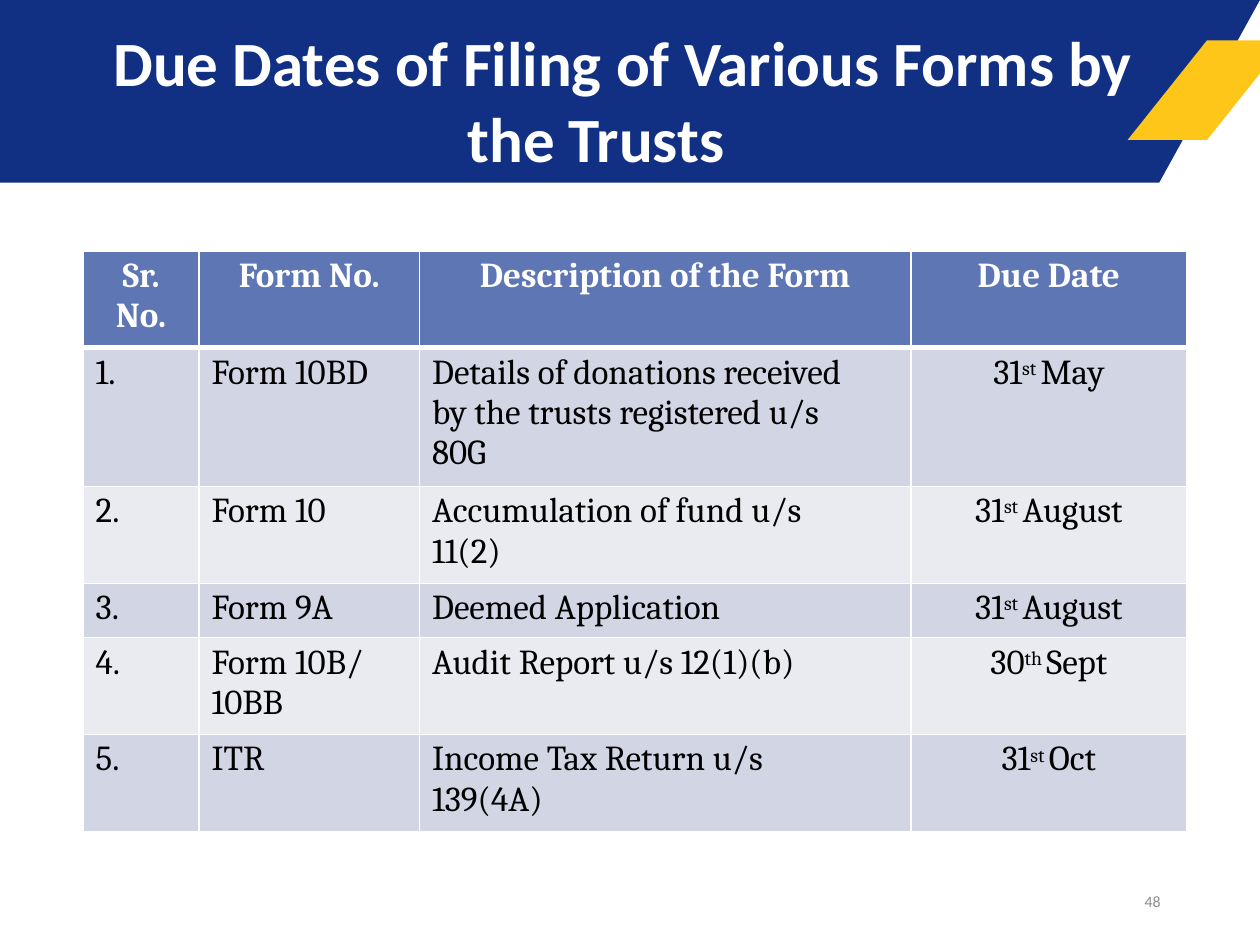
from lxml.etree import SubElement
from pptx import Presentation
from pptx.dml.color import RGBColor
from pptx.enum.text import MSO_ANCHOR, MSO_AUTO_SIZE, PP_ALIGN
from pptx.oxml.ns import qn
from pptx.util import Inches, Pt

COLORS = {
    "navy": "113084", "yellow": "FFC61A", "white": "FFFFFF", "header": "5F76B4",
    "odd": "D2D5E4", "even": "EAEBF1", "black": "000000", "gray": "8C8C8C",
}
TITLE = "Due Dates of Filing of Various Forms by the Trusts"
PAGE_NUMBER = "48"
HEADERS = ["Sr.\nNo.", "Form No.", "Description of the Form", "Due Date"]
FORMS = [
    ("Form 10BD", "Details of donations received by the trusts registered u/s 80G", ("31", "st ", "May")),
    ("Form 10", "Accumulation of fund u/s\n11(2)", ("31", "st ", "August")),
    ("Form 9A", "Deemed Application", ("31", "st ", "August")),
    ("Form 10B/\n10BB", "Audit Report u/s 12(1)(b)", ("30", "th ", "Sept")),
    ("ITR", "Income Tax Return u/s 139(4A)", ("31", "st ", "Oct")),
]
COLUMN_WIDTHS = [0.92, 1.75, 3.9, 2.19]
ROW_HEIGHTS = [0.77, 1.1, 0.77, 0.43, 0.77, 0.77]
BANDS = [
    ("navy", [(0, 0), (10, 0), (9.2, 1.45), (0, 1.45)]),
    ("yellow", [(9.58, 0.32), (10.21, 0.32), (9.58, 1.11), (8.95, 1.11)]),
]
HEADER_FONT = {"name": "Cambria", "size": Pt(20), "bold": True}
BODY_FONT = {**HEADER_FONT, "bold": False}
TITLE_FONT = {"name": "Calibri", "size": Pt(36), "bold": True}
NUMBER_FONT = {"name": "Calibri", "size": Pt(9)}


def rgb(name):
    """Return the named colour."""
    return RGBColor.from_string(COLORS[name])


def set_attributes(target, values):
    """Set each attribute of the target from a dict."""
    for name, value in values.items():
        setattr(target, name, value)


def add_run(paragraph, text, font, color):
    """Append a formatted run to the paragraph."""
    run = paragraph.add_run()
    run.text = text
    set_attributes(run.font, font)
    run.font.color.rgb = rgb(color)
    return run


def add_band(slide, color, points):
    """Draw a filled polygon from points in inches."""
    corners = [(Inches(x), Inches(y)) for x, y in points]
    builder = slide.shapes.build_freeform(*corners[0])
    builder.add_line_segments(corners[1:], close=True)
    shape = builder.convert_to_shape()
    shape.shadow.inherit = False
    shape.fill.solid()
    shape.fill.fore_color.rgb = rgb(color)
    shape.line.fill.background()


def place_text(shape, box, frame_values):
    """Position a text shape and format its frame."""
    shape.left, shape.top, shape.width, shape.height = map(Inches, box)
    set_attributes(shape.text_frame, {
        "auto_size": MSO_AUTO_SIZE.NONE, "word_wrap": True,
        "vertical_anchor": MSO_ANCHOR.MIDDLE, **frame_values,
    })
    return shape.text_frame.paragraphs[0]


def add_title(slide):
    """Fill the title placeholder with a hanging first line."""
    paragraph = place_text(slide.shapes.title, (0.5, -0.02, 8.62, 1.42), {
        "margin_left": 0, "margin_top": Inches(0.2), "margin_right": 0, "margin_bottom": 0,
    })
    set_attributes(paragraph, {"alignment": PP_ALIGN.LEFT, "space_before": Pt(1)})
    properties = paragraph._p.get_or_add_pPr()
    properties.set("marL", str(Inches(3.21)))
    properties.set("indent", str(Inches(-2.81)))
    add_run(paragraph, TITLE, TITLE_FONT, "white")


def set_borders(cell, widths):
    """Draw white cell borders ahead of the cell fill."""
    properties = cell._tc.get_or_add_tcPr()
    for position, (side, width) in enumerate(widths.items()):
        line = SubElement(properties, qn(f"a:{side}"), w=str(Pt(width)))
        fill = SubElement(line, qn("a:solidFill"))
        SubElement(fill, qn("a:srgbClr"), val=COLORS["white"])
        properties.insert(position, line)


def fill_cell(cell, content, row, column):
    """Write one table cell with its fill, borders and text."""
    is_header = row == 0
    is_date = column == len(HEADERS) - 1
    centered = is_header or is_date
    font, color = (HEADER_FONT, "white") if is_header else (BODY_FONT, "black")
    set_attributes(cell, {
        "margin_left": 0 if centered else Inches(0.1), "margin_top": Inches(0.04),
        "margin_right": Inches(0.5) if column == 2 and not is_header else 0,
        "margin_bottom": 0,
    })
    cell.fill.solid()
    cell.fill.fore_color.rgb = rgb("header" if is_header else "odd" if row % 2 else "even")
    set_borders(cell, {"lnL": 1, "lnR": 1, "lnT": 3 if row == 1 else 1, "lnB": 3 if is_header else 1})
    lines = [content] if isinstance(content, tuple) else [(line,) for line in content.split("\n")]
    for index, parts in enumerate(lines):
        paragraph = cell.text_frame.paragraphs[0] if index == 0 else cell.text_frame.add_paragraph()
        set_attributes(paragraph, {
            "alignment": PP_ALIGN.CENTER if centered else PP_ALIGN.LEFT,
            "space_before": Pt(0 if index else 3),
        })
        for part_index, part in enumerate(parts):
            run = add_run(paragraph, part, font, color)
            if part_index == 1:
                run.font.size = Pt(19.5)
                run._r.get_or_add_rPr().set("baseline", "26000")


def add_forms_table(slide):
    """Build the table of forms and due dates."""
    rows = [HEADERS] + [(f"{number}.", *form) for number, form in enumerate(FORMS, 1)]
    table = slide.shapes.add_table(
        len(rows), len(HEADERS), Inches(0.66), Inches(1.99),
        Inches(sum(COLUMN_WIDTHS)), Inches(sum(ROW_HEIGHTS))).table
    for column, width in zip(table.columns, COLUMN_WIDTHS):
        column.width = Inches(width)
    for row, height in zip(table.rows, ROW_HEIGHTS):
        row.height = Inches(height)
    for row_index, row in enumerate(rows):
        for column_index, content in enumerate(row):
            fill_cell(table.cell(row_index, column_index), content, row_index, column_index)


def main():
    """Build and save the slide."""
    presentation = Presentation()
    presentation.slide_width, presentation.slide_height = Inches(10), Inches(7.5)
    slide = presentation.slides.add_slide(presentation.slide_layouts[5])
    for color, points in BANDS:
        add_band(slide, color, points)
    title = slide.shapes.title
    slide.shapes._spTree.append(title._element)
    add_title(slide)
    add_forms_table(slide)
    number_box = slide.shapes.add_textbox(0, 0, 0, 0)
    paragraph = place_text(number_box, (7.06, 6.95, 2.25, 0.4), {})
    paragraph.alignment = PP_ALIGN.RIGHT
    add_run(paragraph, PAGE_NUMBER, NUMBER_FONT, "gray")
    presentation.save("out.pptx")


if __name__ == "__main__":
    main()
